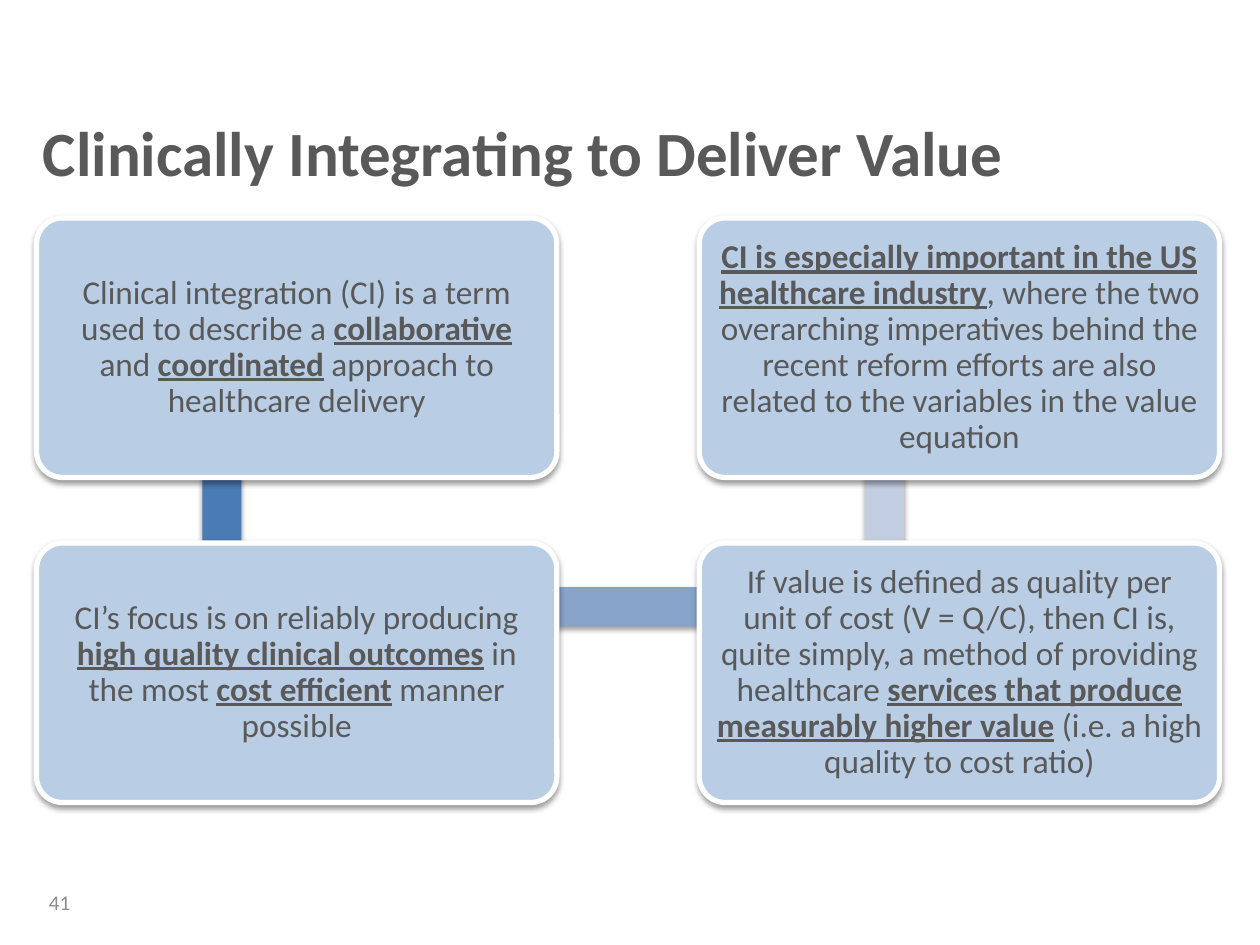
from lxml.etree import SubElement
from pptx import Presentation
from pptx.dml.color import RGBColor
from pptx.enum.shapes import MSO_SHAPE
from pptx.enum.text import MSO_ANCHOR, PP_ALIGN
from pptx.oxml.ns import qn
from pptx.util import Inches, Pt

COLORS = {
    "text": "595959", "number": "8C8C8C", "card": "B9CDE5", "outline": "FFFFFF",
    "first_bar": "4B7BB5", "second_bar": "88A3CA", "third_bar": "C2CDE1",
    "shadow": "000000",
}
FONT = "Calibri"
CARD_WIDTH, CARD_HEIGHT = 4.13, 2.06
LEFT_COLUMN, RIGHT_COLUMN = 0.29, 5.55
TOP_ROW, BOTTOM_ROW = 1.73, 4.31
BAR_THICKNESS = 0.31

# Each card: left, top, and its (text, emphasized) runs
CARDS = [
    (LEFT_COLUMN, TOP_ROW, [
        ("Clinical integration (CI) is a term used to describe a ", False),
        ("collaborative", True), (" and ", False), ("coordinated", True),
        (" approach to healthcare delivery", False)]),
    (LEFT_COLUMN, BOTTOM_ROW, [
        ("CI’s focus is on reliably producing ", False),
        ("high quality clinical outcomes", True), (" in the most ", False),
        ("cost efficient", True), (" manner possible", False)]),
    (RIGHT_COLUMN, BOTTOM_ROW, [
        ("If value is defined as quality per unit of cost (V = Q/C), then CI is, "
         "quite simply, a method of providing healthcare ", False),
        ("services that produce measurably higher value", True),
        (" (i.e. a high quality to cost ratio)", False)]),
    (RIGHT_COLUMN, TOP_ROW, [
        ("CI is especially important in the US healthcare industry", True),
        (", where the two overarching imperatives behind the recent reform efforts "
         "are also related to the variables in the value equation", False)]),
]

# Each bar: left, top, length, rotation, color
BARS = [
    (0.48, 3.37, 2.56, 90, "first_bar"),
    (1.77, 4.66, 5.24, 0, "second_bar"),
    (5.74, 3.37, 2.56, 270, "third_bar"),
]


def rgb(name):
    return RGBColor.from_string(COLORS[name])


def add_run(para, text, size, color="text", bold=False, underline=False):
    span = para.add_run()
    span.text = text
    font = span.font
    font.name, font.size, font.bold, font.underline = FONT, Pt(size), bold, underline
    font.color.rgb = rgb(color)


def add_soft_shadow(shape):
    shape.shadow.inherit = False
    effects = shape._element.spPr.find(qn("a:effectLst"))
    shadow = SubElement(effects, qn("a:outerShdw"), blurRad=str(Pt(3.1)),
                        dist=str(Pt(1.6)), dir="5400000", rotWithShape="0")
    color = SubElement(shadow, qn("a:srgbClr"), val=COLORS["shadow"])
    SubElement(color, qn("a:alpha"), val="38000")


def add_title(page, left, top, width, height):
    title = page.shapes.title
    title.left, title.top = Inches(left), Inches(top)
    title.width, title.height = Inches(width), Inches(height)
    frame = title.text_frame
    frame.vertical_anchor = MSO_ANCHOR.TOP
    frame.margin_top = 0
    para = frame.paragraphs[0]
    para.alignment = PP_ALIGN.LEFT
    add_run(para, "Clinically Integrating to Deliver Value", 36, bold=True)


def add_page_number(page, left, top, width, height):
    box = page.shapes.add_textbox(Inches(left), Inches(top), Inches(width), Inches(height))
    frame = box.text_frame
    frame.word_wrap = True
    frame.vertical_anchor = MSO_ANCHOR.MIDDLE
    add_run(frame.paragraphs[0], "41", 12, "number")


def add_bar(page, left, top, length, rotation, color):
    bar = page.shapes.add_shape(MSO_SHAPE.RECTANGLE, Inches(left), Inches(top),
                                Inches(length), Inches(BAR_THICKNESS))
    bar.rotation = rotation
    bar.fill.solid()
    bar.fill.fore_color.rgb = rgb(color)
    bar.line.fill.background()
    add_soft_shadow(bar)


def add_card(page, left, top, runs):
    card = page.shapes.add_shape(MSO_SHAPE.ROUNDED_RECTANGLE, Inches(left), Inches(top),
                                 Inches(CARD_WIDTH), Inches(CARD_HEIGHT))
    card.adjustments[0] = 0.1
    card.fill.solid()
    card.fill.fore_color.rgb = rgb("card")
    card.line.color.rgb = rgb("outline")
    card.line.width = Pt(3)
    add_soft_shadow(card)
    frame = card.text_frame
    frame.word_wrap = True
    frame.vertical_anchor = MSO_ANCHOR.MIDDLE
    # The rounded corners already inset the text by 0.06 inches
    frame.margin_left = frame.margin_right = Inches(0.08)
    frame.margin_top = frame.margin_bottom = Inches(0.08)
    para = frame.paragraphs[0]
    para.alignment = PP_ALIGN.CENTER
    para.line_spacing = 0.9
    for text, emphasized in runs:
        add_run(para, text, 19, bold=emphasized, underline=emphasized)


def main():
    deck = Presentation()
    deck.slide_width, deck.slide_height = Inches(10), Inches(7.5)
    page = deck.slides.add_slide(deck.slide_layouts[5])
    add_title(page, 0.24, 0.9, 9.26, 1.09)
    add_page_number(page, 0.29, 6.96, 0.71, 0.4)
    for bar in BARS:
        add_bar(page, *bar)
    for card in CARDS:
        add_card(page, *card)
    deck.save("out.pptx")


if __name__ == "__main__":
    main()
